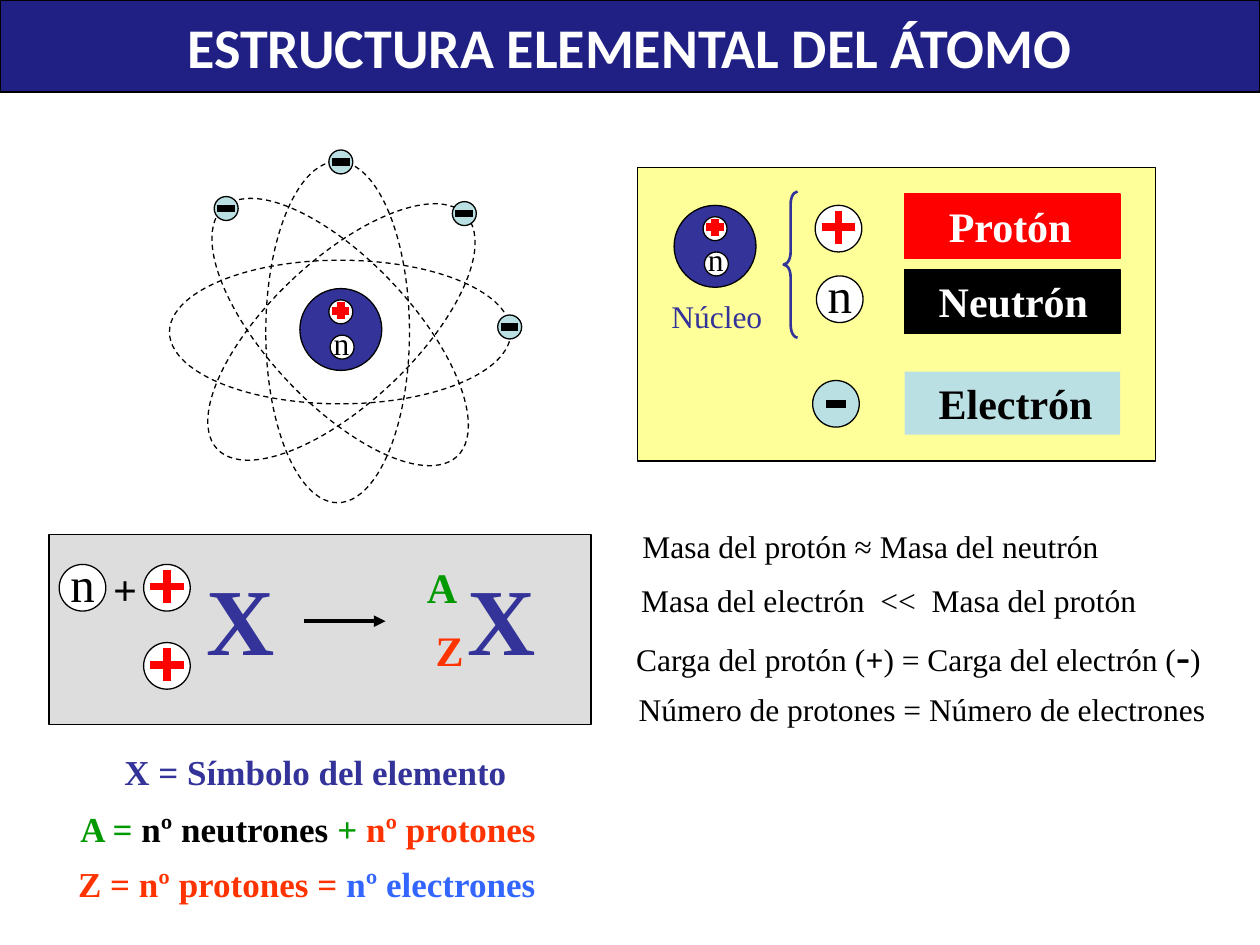
from pptx import Presentation
from pptx.dml.color import RGBColor
from pptx.enum.dml import MSO_LINE
from pptx.enum.shapes import MSO_CONNECTOR, MSO_SHAPE
from pptx.enum.text import MSO_ANCHOR, MSO_AUTO_SIZE, PP_ALIGN
from pptx.oxml.ns import qn
from pptx.util import Inches, Pt
from lxml import etree

OVAL, RECT, BRACE = MSO_SHAPE.OVAL, MSO_SHAPE.RECTANGLE, MSO_SHAPE.LEFT_BRACE
STRAIGHT = MSO_CONNECTOR.STRAIGHT
DASH = MSO_LINE.DASH
LEFT, CENTER = PP_ALIGN.LEFT, PP_ALIGN.CENTER
TOP, MIDDLE = MSO_ANCHOR.TOP, MSO_ANCHOR.MIDDLE
NO_FIT = MSO_AUTO_SIZE.NONE

BLACK = RGBColor(0x00, 0x00, 0x00)
WHITE = RGBColor(0xFF, 0xFF, 0xFF)
NAVY = RGBColor(0x20, 0x20, 0x84)
INDIGO = RGBColor(0x33, 0x33, 0x99)
YELLOW = RGBColor(0xFF, 0xFF, 0x99)
GRAY = RGBColor(0xDD, 0xDD, 0xDD)
CYAN = RGBColor(0xBB, 0xE0, 0xE3)
RED = RGBColor(0xFF, 0x00, 0x00)
ORANGE = RGBColor(0xFF, 0x33, 0x00)
GREEN = RGBColor(0x00, 0x99, 0x00)
BLUE = RGBColor(0x33, 0x66, 0xFF)

SERIF = "Times New Roman"
SMALL, BIG = 0.19, 0.37


def write(frame, runs, align=LEFT, anchor=TOP, wrap=True):
    """Fill a frame with one paragraph of (text, size, color, bold) runs."""
    form = {"word_wrap": wrap, "auto_size": NO_FIT, "vertical_anchor": anchor}
    for key, val in form.items():
        setattr(frame, key, val)
    para = frame.paragraphs[0]
    para.alignment = align
    for text, size, color, bold in runs:
        run = para.add_run()
        run.text = text
        for key, val in {"name": SERIF, "size": Pt(size), "bold": bold}.items():
            setattr(run.font, key, val)
        run.font.color.rgb = color


def label(slide, box, runs, align=LEFT):
    area = slide.shapes.add_textbox(*map(Inches, box))
    write(area.text_frame, runs, align)


def paint(shape, fill, line, width=0.75):
    if fill is None:
        shape.fill.background()
    else:
        shape.fill.solid()
        shape.fill.fore_color.rgb = fill
    if line is None:
        shape.line.fill.background()
    else:
        shape.line.color.rgb = line
        shape.line.width = Pt(width)


def figure(slide, kind, box, fill=None, line=BLACK, width=0.75):
    shape = slide.shapes.add_shape(kind, *map(Inches, box))
    shape.shadow.inherit = False
    paint(shape, fill, line, width)
    return shape


def stroke(slide, ends, color, width, arrow=False):
    link = slide.shapes.add_connector(STRAIGHT, *map(Inches, ends))
    link.line.color.rgb = color
    link.line.width = Pt(width)
    if arrow:
        edge = link.line._get_or_add_ln()
        etree.SubElement(edge, qn("a:tailEnd"), type="triangle")
    etree.SubElement(link._element.spPr, qn("a:effectLst"))


def ball(slide, x, y, size, fill=WHITE):
    figure(slide, OVAL, (x, y, size, size), fill)


def proton(slide, x, y, size):
    ball(slide, x, y, size)
    mx, my, half = x + size / 2, y + size / 2 - 0.01, size * 0.36
    stroke(slide, (mx - half, my, mx + half, my), RED, 4.5)
    stroke(slide, (mx, my - half, mx, my + half), RED, 4.5)


def neutron(slide, x, y, size):
    ball(slide, x, y, size)
    if size == SMALL:
        box, points = (x - 0.07, y - 0.14, 0.33, 0.4), 18
    else:
        box, points = (x - 0.01, y - 0.14, 0.55, 0.57), 28
    label(slide, box, [("n", points, BLACK, False)])


def electron(slide, x, y, size, bar):
    ball(slide, x, y, size, CYAN)
    mx, my = x + size / 2, y + size / 2
    stroke(slide, (mx - bar / 2, my, mx + bar / 2, my), BLACK, 4.5)


def nucleus(slide, x, y):
    ball(slide, x, y, 0.65, INDIGO)
    proton(slide, x + 0.23, y + 0.09, SMALL)
    neutron(slide, x + 0.24, y + 0.37, SMALL)


def atom(slide):
    for x, turn in ((2.13, 270), (2.11, 0), (2.13, 316.7), (2.14, 46.7)):
        orbit = figure(slide, OVAL, (x, 1.28, 1.14, 2.71))
        orbit.line.dash_style = DASH
        orbit.rotation = turn
    nucleus(slide, 2.38, 2.29)
    for x, y in ((1.7, 1.56), (3.59, 1.6), (2.61, 1.19), (3.95, 2.5)):
        electron(slide, x, y, SMALL, 0.14)


def tag(slide, y, text, fill, color, indent):
    shape = figure(slide, RECT, (7.18, y, 1.71, 0.51), fill, fill)
    shape.text_frame.margin_left = Inches(0.1 + indent)
    write(shape.text_frame, [(text, 24, color, True)])
    return shape


def legend(slide):
    figure(slide, RECT, (5.06, 1.33, 4.11, 2.33), YELLOW)
    nucleus(slide, 5.35, 1.63)
    label(slide, (5.23, 2.31, 1.21, 0.4), [("Núcleo", 18, INDIGO, False)])
    brace = figure(slide, BRACE, (6.22, 1.52, 0.11, 1.16), None, INDIGO, 1.5)
    brace.adjustments[0] = 0.9
    proton(slide, 6.47, 1.63, BIG)
    neutron(slide, 6.48, 2.19, BIG)
    electron(slide, 6.45, 3.02, BIG, 0.16)
    tag(slide, 1.54, "Protón", RED, WHITE, 0.25)
    tag(slide, 2.14, "Neutrón", BLACK, WHITE, 0.17)
    last = tag(slide, 2.95, "Electrón", CYAN, BLACK, 0.17)
    last.height = Inches(0.5)
    last.line.fill.background()


def symbol(slide):
    figure(slide, RECT, (0.39, 4.24, 4.3, 1.51), GRAY)
    neutron(slide, 0.47, 4.48, BIG)
    label(slide, (0.8, 4.42, 0.36, 0.5), [("+", 24, BLACK, True)])
    for y in (4.48, 5.1):
        proton(slide, 1.14, y, BIG)
    for x in (1.54, 3.61):
        label(slide, (x, 4.4, 0.91, 1), [("X", 54, INDIGO, True)])
    stroke(slide, (2.41, 4.93, 3.06, 4.93), BLACK, 2.25, arrow=True)
    label(slide, (3.29, 4.41, 0.45, 0.51), [("A", 24, GREEN, True)])
    label(slide, (3.36, 4.91, 0.45, 0.51), [("Z", 24, ORANGE, True)])


def keys(slide):
    rows = (
        (0.79, 5.91, 3.43, (("X = Símbolo del elemento", INDIGO),)),
        (0.42, 6.36, 4.05, (("A = ", GREEN), ("nº neutrones", BLACK),
                            (" + ", GREEN), ("nº protones", ORANGE))),
        (0.26, 6.8, 4.35, (("Z = nº protones = ", ORANGE),
                           ("nº electrones", BLUE))),
    )
    for x, y, wide, parts in rows:
        runs = [(text, 20, color, True) for text, color in parts]
        label(slide, (x, y, wide, 0.43), runs, CENTER)


def facts(slide):
    rows = (
        (5, 4.13, 4, "Masa del protón ≈ Masa del neutrón"),
        (4.99, 4.56, 4.52, "Masa del electrón  <<  Masa del protón"),
        (4.97, 5.43, 4.89, "Número de protones = Número de electrones"),
    )
    for x, y, wide, text in rows:
        label(slide, (x, y, wide, 0.4), [(text, 18, BLACK, False)])
    label(slide, (4.95, 4.95, 4.78, 0.5), [
        ("Carga del protón (", 18, BLACK, False), ("+", 18, BLACK, True),
        (") = Carga del electrón (", 18, BLACK, False),
        ("-", 24, BLACK, True), (")", 18, BLACK, False)])


def heading(slide):
    title = slide.shapes.title
    place = {"left": 0, "top": 0, "width": Inches(10), "height": Inches(0.73)}
    for key, val in place.items():
        setattr(title, key, val)
    paint(title, NAVY, BLACK)
    runs = [("ESTRUCTURA ELEMENTAL DEL ÁTOMO", 32, WHITE, True)]
    write(title.text_frame, runs, CENTER, MIDDLE, False)
    title.text_frame.paragraphs[0].runs[0].font.name = "Calibri"


def main():
    deck = Presentation()
    deck.slide_width, deck.slide_height = Inches(10), Inches(7.5)
    slide = deck.slides.add_slide(deck.slide_layouts[5])
    for draw in (heading, legend, atom, symbol, keys, facts):
        draw(slide)
    deck.save("out.pptx")


if __name__ == "__main__":
    main()
